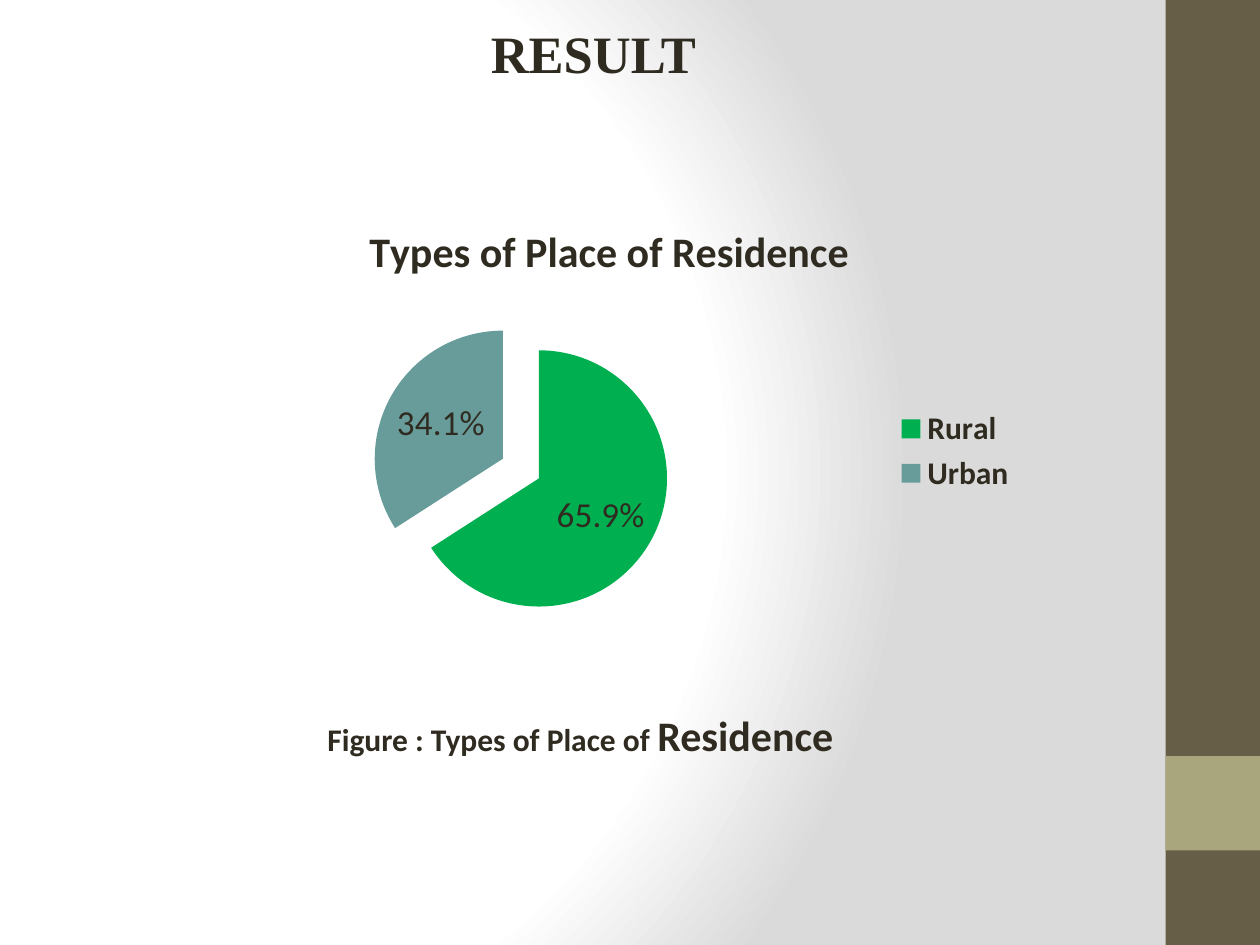
from dataclasses import dataclass

from pptx import Presentation
from pptx.chart.data import CategoryChartData
from pptx.dml.color import RGBColor
from pptx.enum.chart import XL_CHART_TYPE, XL_LABEL_POSITION, XL_LEGEND_POSITION
from pptx.enum.shapes import MSO_SHAPE
from pptx.enum.text import MSO_ANCHOR, PP_ALIGN
from pptx.oxml import parse_xml
from pptx.oxml.ns import nsdecls, qn
from pptx.util import Inches, Pt


@dataclass(frozen=True)
class Theme:
    """Colours, fonts and type sizes of the slide."""

    ink: str = "2F2B20"
    band: str = "675E47"
    accent: str = "A9A57C"
    paper: str = "FFFFFF"
    shade: str = "DADADA"
    rural: str = "00B050"
    urban: str = "689C9A"
    heading_font: str = "Times New Roman"
    body_font: str = "Calibri"
    heading: int = 30
    large: int = 24
    label: int = 20
    small: int = 18


THEME = Theme()


def style_font(font, size, bold=True, name=THEME.body_font):
    """Apply a text style in the ink colour."""
    formats = {"size": Pt(size), "bold": bold, "name": name}
    for attribute, value in formats.items():
        setattr(font, attribute, value)
    font.color.rgb = RGBColor.from_string(THEME.ink)


def paint_background(slide):
    """Fill the background with a circular gradient."""
    slide.background.fill.gradient()
    stops = "".join(
        f'<a:gs pos="{percent * 1000}"><a:srgbClr val="{color}"/></a:gs>'
        for percent, color in ((0, THEME.paper), (75, THEME.paper), (100, THEME.shade))
    )
    gradient = parse_xml(
        f'<a:gradFill rotWithShape="1" {nsdecls("a")}><a:gsLst>{stops}</a:gsLst>'
        '<a:path path="circle">'
        '<a:fillToRect l="20000" t="50000" r="100000" b="50000"/>'
        "</a:path></a:gradFill>"
    )
    default = next(slide.element.iter(qn("a:gradFill")))
    default.getparent().replace(default, gradient)


def add_side_band(slide, left, top, width, height):
    """Draw the dark band with its light square."""
    blocks = (
        (top, height, THEME.band),
        (top + height * 4 // 5, width, THEME.accent),
    )
    for block_top, block_height, color in blocks:
        block = slide.shapes.add_shape(
            MSO_SHAPE.RECTANGLE, left, block_top, width, block_height
        )
        block.shadow.inherit = False
        block.fill.solid()
        block.fill.fore_color.rgb = RGBColor.from_string(color)
        block.line.fill.background()


def add_text(slide, box, pieces, align, anchor, font_name):
    """Write one paragraph of (text, size) pieces in a box."""
    frame = slide.shapes.add_textbox(*box).text_frame
    formats = {"word_wrap": True, "vertical_anchor": anchor}
    for attribute, value in formats.items():
        setattr(frame, attribute, value)
    paragraph = frame.paragraphs[0]
    paragraph.alignment = align
    for text, size in pieces:
        run = paragraph.add_run()
        run.text = text
        style_font(run.font, size, name=font_name)


def place_plot(chart, x, y, w, h):
    """Fix the inner plot area as fractions of the chart."""
    plot_area = next(chart.element.iter(qn("c:plotArea")))
    for automatic in plot_area.findall(qn("c:layout")):
        plot_area.remove(automatic)
    sizes = "".join(
        f'<c:{key} val="{value}"/>' for key, value in zip("xywh", (x, y, w, h))
    )
    plot_area.insert(0, parse_xml(
        f'<c:layout {nsdecls("c")}><c:manualLayout><c:layoutTarget val="inner"/>'
        f'<c:xMode val="edge"/><c:yMode val="edge"/>{sizes}'
        "</c:manualLayout></c:layout>"
    ))


def add_residence_pie(slide, left, top, width, height):
    """Add the exploded pie of places of residence."""
    title = "Types of Place of Residence"
    shares = {"Rural": (0.659, THEME.rural), "Urban": (0.341, THEME.urban)}
    data = CategoryChartData(number_format="0.0%")
    data.categories = list(shares)
    data.add_series(title, [share for share, _ in shares.values()])
    chart = slide.shapes.add_chart(
        XL_CHART_TYPE.PIE, left, top, width, height, data
    ).chart
    place_plot(chart, 0.08, 0.24, 0.63, 0.59)

    chart.has_title = True
    chart.chart_title.include_in_layout = False
    heading = chart.chart_title.text_frame
    heading.text = title
    style_font(heading.paragraphs[0].runs[0].font, THEME.large)

    chart.has_legend = True
    legend_formats = {
        "position": XL_LEGEND_POSITION.RIGHT,
        "include_in_layout": False,
    }
    for attribute, value in legend_formats.items():
        setattr(chart.legend, attribute, value)
    style_font(chart.legend.font, THEME.small)

    plot = chart.plots[0]
    plot.vary_by_categories = True
    residence = plot.series[0]
    explosion = parse_xml(f'<c:explosion {nsdecls("c")} val="16"/>')
    next(chart.element.iter(qn("c:ser"))).find(qn("c:tx")).addnext(explosion)
    for index, (_, color) in enumerate(shares.values()):
        fill = residence.points[index].format.fill
        fill.solid()
        fill.fore_color.rgb = RGBColor.from_string(color)

    labels = residence.data_labels
    label_formats = {
        "show_value": True,
        "show_percentage": False,
        "number_format": "0.0%",
        "number_format_is_linked": False,
        "position": XL_LABEL_POSITION.INSIDE_END,
    }
    for attribute, value in label_formats.items():
        setattr(labels, attribute, value)
    style_font(labels.font, THEME.label, bold=False)


def main():
    """Build and save the slide."""
    deck = Presentation()
    deck.slide_width, deck.slide_height = Inches(10), Inches(7.5)
    slide = deck.slides.add_slide(deck.slide_layouts[6])
    paint_background(slide)
    add_side_band(slide, Inches(9.25), 0, Inches(0.75), deck.slide_height)
    add_text(
        slide,
        (Inches(2.92), Inches(0.08), Inches(3.58), Inches(0.67)),
        [("RESULT", THEME.heading)],
        PP_ALIGN.CENTER,
        MSO_ANCHOR.MIDDLE,
        THEME.heading_font,
    )
    add_residence_pie(slide, Inches(1.5), Inches(1.58), Inches(6.67), Inches(4))
    add_text(
        slide,
        (Inches(2.5), Inches(5.58), Inches(4.38), Inches(0.5)),
        [("Figure : Types of Place of ", THEME.small), ("Residence", THEME.large)],
        PP_ALIGN.LEFT,
        MSO_ANCHOR.TOP,
        THEME.body_font,
    )
    deck.save("out.pptx")


if __name__ == "__main__":
    main()
